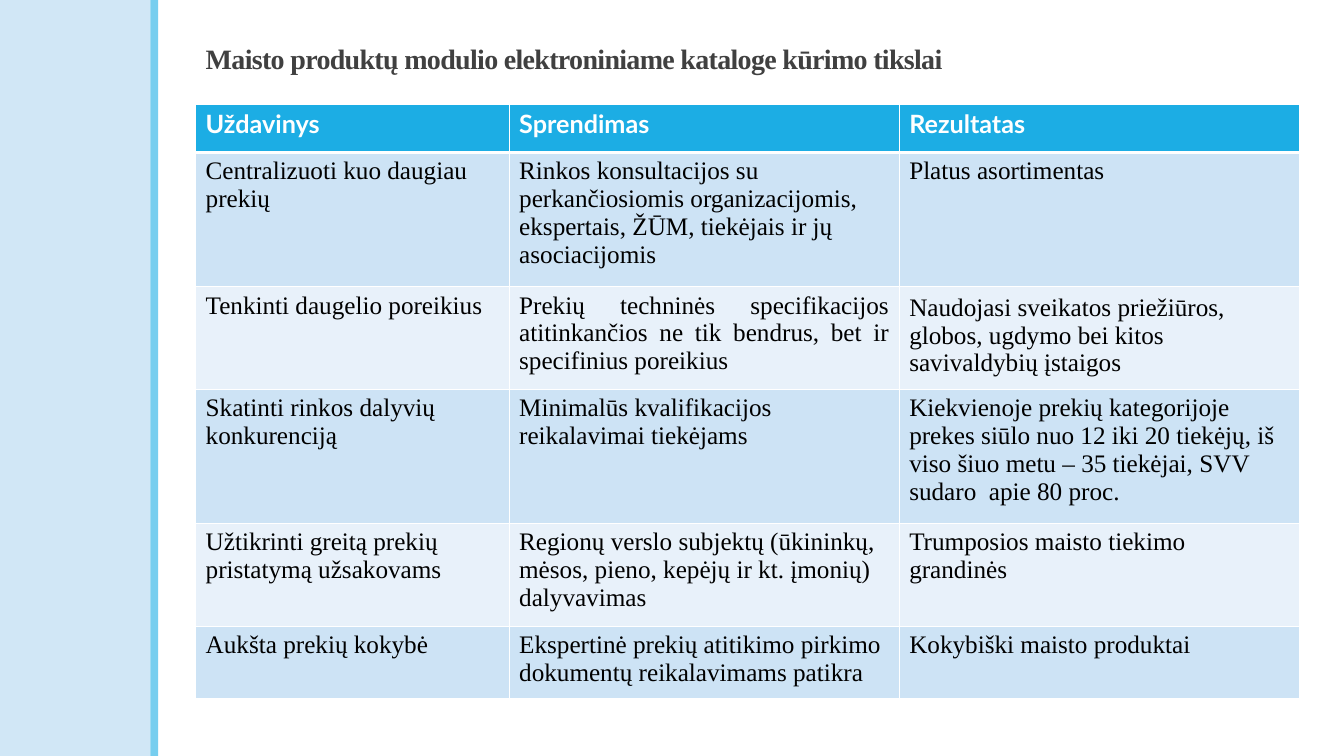
from dataclasses import dataclass

from lxml import etree
from pptx import Presentation
from pptx.dml.color import RGBColor
from pptx.enum import shapes, text
from pptx.oxml import ns
from pptx.util import Cm, Pt


@dataclass(frozen=True)
class Theme:
    panel: str = "D1E7F6"
    stripe: str = "77CEEF"
    header: str = "1CADE4"
    bands: tuple[str, str] = ("CDE3F5", "E8F1FA")
    white: str = "FFFFFF"
    black: str = "000000"
    title: str = "404040"
    body_font: str = "Times New Roman"
    header_font: str = "Lato"
    title_size: int = 20
    table_size: int = 18
    thin_line: int = 1
    thick_line: int = 3


@dataclass(frozen=True)
class Bar:
    left: float
    width: float
    color: str


@dataclass(frozen=True)
class Goal:
    task: str
    solution: str
    result: str
    height: float


THEME = Theme()
PAGE_WIDTH, PAGE_HEIGHT = 33.87, 19.05
TABLE_LEFT, TABLE_TOP = 4.93, 2.62
COLUMN_WIDTHS = (7.9, 9.83, 10.08)
BARS = (Bar(0, 3.79, THEME.panel), Bar(3.79, 0.2, THEME.stripe))
TITLE = "Maisto produktų modulio elektroniniame kataloge kūrimo tikslai"
GOALS = (
    Goal("Uždavinys", "Sprendimas", "Rezultatas", 1.22),
    Goal("Centralizuoti kuo daugiau prekių",
         "Rinkos konsultacijos su perkančiosiomis organizacijomis, ekspertais, ŽŪM, "
         "tiekėjais ir jų asociacijomis",
         "Platus asortimentas", 3.38),
    Goal("Tenkinti daugelio poreikius",
         "Prekių techninės specifikacijos atitinkančios ne tik bendrus, bet ir "
         "specifinius poreikius",
         "Naudojasi sveikatos priežiūros, globos, ugdymo bei kitos savivaldybių įstaigos",
         2.59),
    Goal("Skatinti rinkos dalyvių konkurenciją",
         "Minimalūs kvalifikacijos reikalavimai tiekėjams",
         "Kiekvienoje prekių kategorijoje prekes siūlo nuo 12 iki 20 tiekėjų, "
         "iš viso šiuo metu – 35 tiekėjai, SVV sudaro  apie 80 proc.", 3.38),
    Goal("Užtikrinti greitą prekių pristatymą užsakovams",
         "Regionų verslo subjektų (ūkininkų, mėsos, pieno, kepėjų ir kt. įmonių) "
         "dalyvavimas",
         "Trumposios maisto tiekimo grandinės", 2.59),
    Goal("Aukšta prekių kokybė",
         "Ekspertinė prekių atitikimo pirkimo dokumentų reikalavimams patikra",
         "Kokybiški maisto produktai", 1.83),
)
JUSTIFIED_CELL = (2, 1)
LOWERED_CELL = (2, 2)


def write(frame, words: str, *, font: str, size: int, color: str, bold: bool = False,
          align=text.PP_ALIGN.LEFT, line_spacing: float | None = None,
          tracking: float | None = None) -> None:
    """Put one formatted paragraph in a text frame; tracking is in points."""
    para = frame.paragraphs[0]
    para.alignment = align
    para.line_spacing = line_spacing
    span = para.add_run()
    span.text = words
    span.font.name = font
    span.font.size = Pt(size)
    span.font.bold = bold
    span.font.color.rgb = RGBColor.from_string(color)
    if tracking is not None:
        span.font._element.set("spc", str(round(tracking * 100)))


def draw_bar(page, bar: Bar) -> None:
    box = page.shapes.add_shape(shapes.MSO_SHAPE.RECTANGLE, Cm(bar.left), 0,
                                Cm(bar.width), Cm(PAGE_HEIGHT))
    box.shadow.inherit = False
    box.fill.solid()
    box.fill.fore_color.rgb = RGBColor.from_string(bar.color)
    box.line.fill.background()


def set_borders(cell, top: int, bottom: int) -> None:
    """Give a cell white borders; top and bottom are widths in points."""
    properties = cell._tc.get_or_add_tcPr()
    widths = {"lnL": THEME.thin_line, "lnR": THEME.thin_line, "lnT": top, "lnB": bottom}
    for side, width in widths.items():
        line = etree.SubElement(properties, ns.qn(f"a:{side}"), w=str(Pt(width)))
        fill = etree.SubElement(line, ns.qn("a:solidFill"))
        etree.SubElement(fill, ns.qn("a:srgbClr"), val=THEME.white)


def draw_table(page) -> None:
    table = page.shapes.add_table(
        len(GOALS), len(COLUMN_WIDTHS), Cm(TABLE_LEFT), Cm(TABLE_TOP),
        Cm(sum(COLUMN_WIDTHS)), Cm(sum(goal.height for goal in GOALS))).table
    table.horz_banding = False
    for column, width in zip(table.columns, COLUMN_WIDTHS):
        column.width = Cm(width)
    for row, goal in enumerate(GOALS):
        table.rows[row].height = Cm(goal.height)
        is_header = row == 0
        fill = THEME.header if is_header else THEME.bands[(row - 1) % 2]
        for column, words in enumerate((goal.task, goal.solution, goal.result)):
            cell = table.cell(row, column)
            set_borders(cell,
                        top=THEME.thick_line if row == 1 else THEME.thin_line,
                        bottom=THEME.thick_line if is_header else THEME.thin_line)
            cell.fill.solid()
            cell.fill.fore_color.rgb = RGBColor.from_string(fill)
            if (row, column) == LOWERED_CELL:
                cell.margin_top = Cm(0.18)
            justified = (row, column) == JUSTIFIED_CELL
            write(cell.text_frame, words,
                  font=THEME.header_font if is_header else THEME.body_font,
                  size=THEME.table_size,
                  color=THEME.white if is_header else THEME.black,
                  bold=is_header,
                  align=text.PP_ALIGN.JUSTIFY if justified else text.PP_ALIGN.LEFT)


def place_title(page) -> None:
    box = page.shapes.title
    box.left, box.top, box.width, box.height = Cm(4.93), Cm(0.61), Cm(26.44), Cm(1.83)
    frame = box.text_frame
    frame.word_wrap = True
    frame.auto_size = text.MSO_AUTO_SIZE.NONE
    frame.vertical_anchor = text.MSO_ANCHOR.MIDDLE
    write(frame, TITLE, font=THEME.body_font, size=THEME.title_size, color=THEME.title,
          bold=True, line_spacing=0.85, tracking=-0.5)


def main() -> None:
    deck = Presentation()
    deck.slide_width, deck.slide_height = Cm(PAGE_WIDTH), Cm(PAGE_HEIGHT)
    page = deck.slides.add_slide(deck.slide_layouts.get_by_name("Title Only"))
    for bar in BARS:
        draw_bar(page, bar)
    draw_table(page)
    place_title(page)
    deck.save("out.pptx")


if __name__ == "__main__":
    main()
